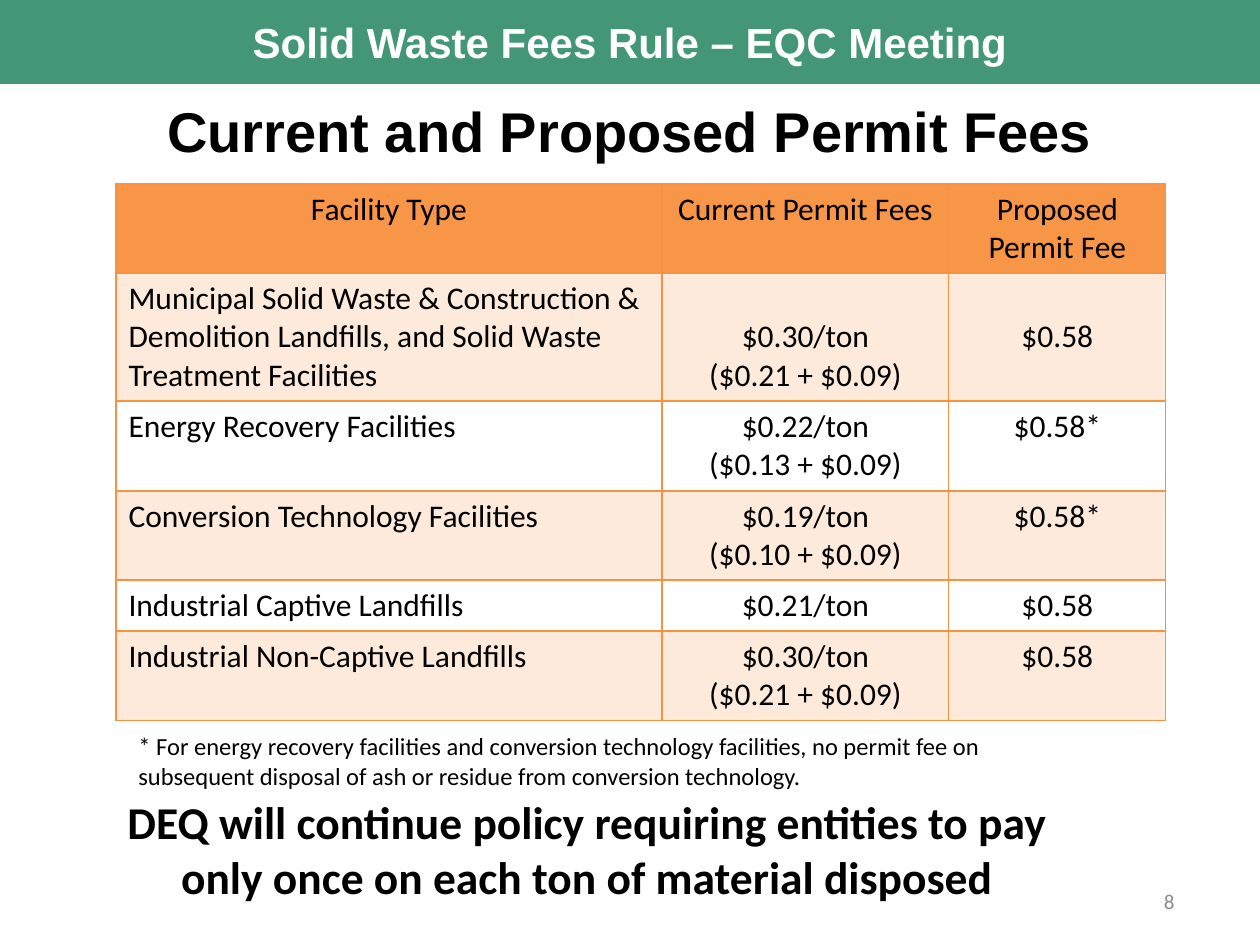
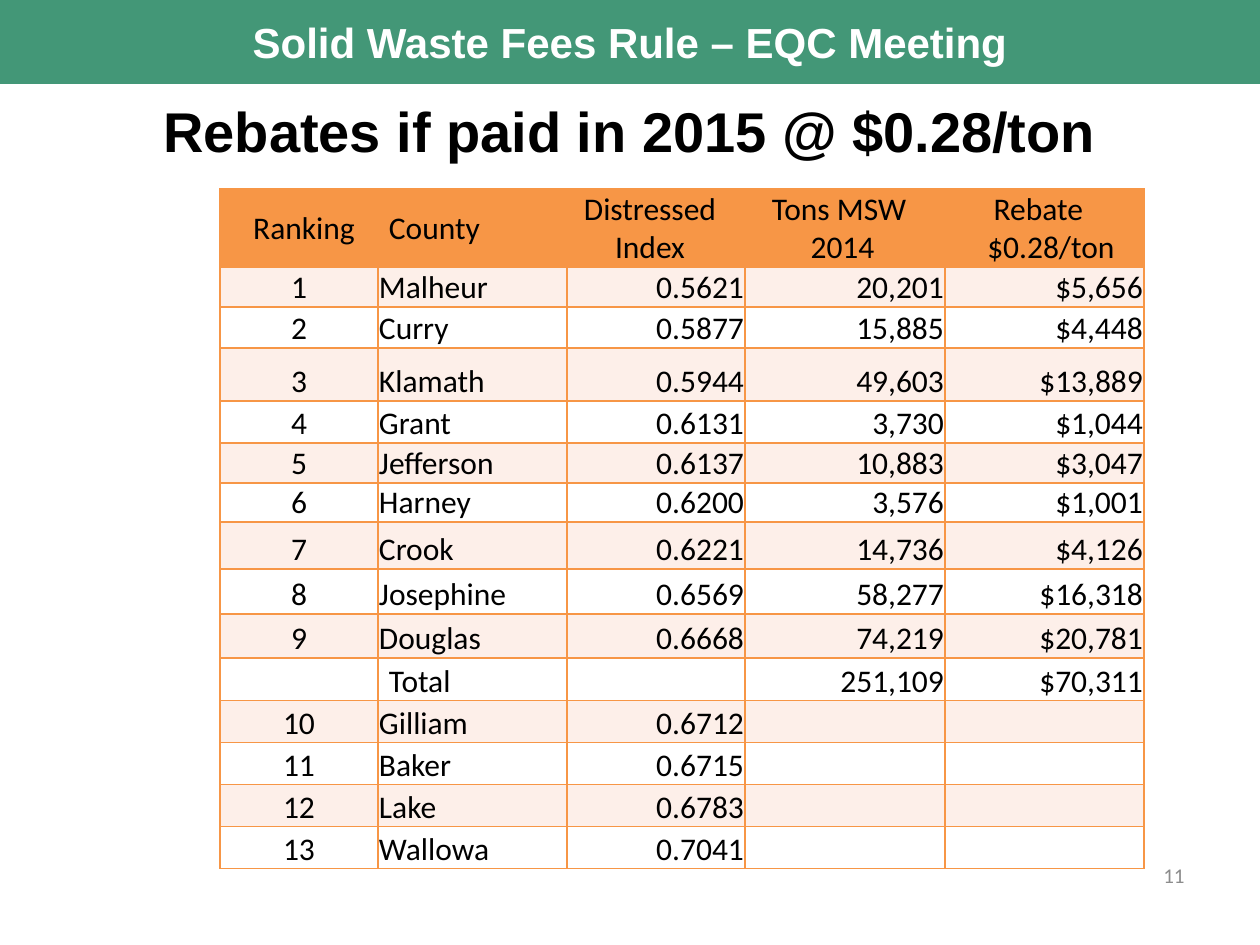
from lxml.etree import SubElement
from pptx import Presentation
from pptx.dml.color import RGBColor
from pptx.enum.shapes import MSO_SHAPE
from pptx.enum.text import MSO_ANCHOR, MSO_AUTO_SIZE, PP_ALIGN
from pptx.oxml.ns import qn
from pptx.util import Emu, Pt

COLORS = {
    "band": "439777", "white": "FFFFFF", "black": "000000", "number": "8C8C8C",
    "header": "F79646", "fee_stripe": "FDEADA", "rebate_stripe": "FDEFE9",
    "fee_border": "F69240", "rebate_border": "F79646",
}
LEFT, CENTER, RIGHT = PP_ALIGN.LEFT, PP_ALIGN.CENTER, PP_ALIGN.RIGHT
TOP, MIDDLE, BOTTOM = MSO_ANCHOR.TOP, MSO_ANCHOR.MIDDLE, MSO_ANCHOR.BOTTOM

FEE_ROWS = [
    ("Facility Type", "Current Permit Fees", "Proposed Permit Fee"),
    ("Municipal Solid Waste & Construction & Demolition Landfills, "
     "and Solid Waste Treatment Facilities", "$0.30/ton\n($0.21 + $0.09)", "$0.58"),
    ("Energy Recovery Facilities", "$0.22/ton\n($0.13 + $0.09)", "$0.58*"),
    ("Conversion Technology Facilities", "$0.19/ton\n($0.10 + $0.09)", "$0.58*"),
    ("Industrial Captive Landfills", "$0.21/ton", "$0.58"),
    ("Industrial Non-Captive Landfills", "$0.30/ton\n($0.21 + $0.09)", "$0.58"),
]
FEE_WIDTHS = [546, 287, 217]
FEE_HEIGHTS = [89, 128, 90, 89, 51, 90]

REBATE_ROWS = [
    ("Ranking", "County", "Distressed Index", "Tons MSW\n2014", "Rebate\n$0.28/ton"),
    ("1", "Malheur", "0.5621", "20,201", "$5,656"),
    ("2", "Curry", "0.5877", "15,885", "$4,448"),
    ("3", "Klamath", "0.5944", "49,603", "$13,889"),
    ("4", "Grant", "0.6131", "3,730", "$1,044"),
    ("5", "Jefferson", "0.6137", "10,883", "$3,047"),
    ("6", "Harney", "0.6200", "3,576", "$1,001"),
    ("7", "Crook", "0.6221", "14,736", "$4,126"),
    ("8", "Josephine", "0.6569", "58,277", "$16,318"),
    ("9", "Douglas", "0.6668", "74,219", "$20,781"),
    ("", "Total", "", "251,109", "$70,311"),
    ("10", "Gilliam", "0.6712", "", ""),
    ("11", "Baker", "0.6715", "", ""),
    ("12", "Lake", "0.6783", "", ""),
    ("13", "Wallowa", "0.7041", "", ""),
]
REBATE_WIDTHS = [158, 189, 178, 200, 199]
REBATE_HEIGHTS = [78, 40, 41, 53, 42, 40, 39, 47, 45, 44, 43, 42, 42, 42, 42]


def px(length):
    return Emu(round(length * 914400 / 126))


def rgb(name):
    return RGBColor.from_string(COLORS[name])


def write(frame, text, size, color="black", align=LEFT, font="Calibri", bold=False):
    """Fill a text frame, one paragraph for each line of text."""
    frame.text = text
    for para in frame.paragraphs:
        para.alignment = align
        para.font.name = font
        para.font.size = Pt(size)
        para.font.bold = bold
        para.font.color.rgb = rgb(color)


def add_text(page, box, text, size, anchor=TOP, **style):
    frame = page.shapes.add_textbox(*map(px, box)).text_frame
    frame.word_wrap = True
    frame.vertical_anchor = anchor
    write(frame, text, size, **style)


def add_band(page):
    band = page.shapes.add_shape(MSO_SHAPE.RECTANGLE, 0, 0, px(1260), px(84))
    band.shadow.inherit = False
    band.fill.solid()
    band.fill.fore_color.rgb = rgb("band")
    band.line.fill.background()
    band.text_frame.vertical_anchor = MIDDLE
    write(band.text_frame, "Solid Waste Fees Rule – EQC Meeting", 24,
          color="white", align=CENTER, font="Arial", bold=True)


def set_title(page, text, height):
    title = page.shapes.title
    title.left, title.top, title.width, title.height = map(px, (63, 84, 1134, height))
    frame = title.text_frame
    frame.auto_size = MSO_AUTO_SIZE.NONE
    frame.vertical_anchor = TOP
    frame.margin_top = px(13)
    write(frame, text, 32, align=CENTER, font="Arial", bold=True)


def add_page(deck, title, title_height, number, number_box):
    page = deck.slides.add_slide(deck.slide_layouts[5])
    add_band(page)
    set_title(page, title, title_height)
    add_text(page, number_box, number, 12, MIDDLE, color="number", align=RIGHT)
    return page


def set_margins(cell, left, top, right, bottom):
    cell.margin_left, cell.margin_top = px(left), px(top)
    cell.margin_right, cell.margin_bottom = px(right), px(bottom)


def set_borders(cell, color, points):
    properties = cell._tc.get_or_add_tcPr()
    for position, side in enumerate(("a:lnL", "a:lnR", "a:lnT", "a:lnB")):
        line = SubElement(properties, qn(side), w=str(Pt(points)))
        fill = SubElement(line, qn("a:solidFill"))
        SubElement(fill, qn("a:srgbClr"), val=COLORS[color])
        properties.insert(position, line)


def add_table(page, left, top, widths, heights, rows, aligns, stripe, border, points):
    """Add a striped table whose header row is centred, and return it."""
    table = page.shapes.add_table(len(rows), len(widths), px(left), px(top),
                                  px(sum(widths)), px(sum(heights))).table
    table.first_row = table.horz_banding = False
    for column, width in zip(table.columns, widths):
        column.width = px(width)
    for row, height in zip(table.rows, heights):
        row.height = px(height)
    for r, texts in enumerate(rows):
        fill = "header" if r == 0 else stripe if r % 2 else "white"
        for c, text in enumerate(texts):
            cell = table.cell(r, c)
            cell.fill.solid()
            cell.fill.fore_color.rgb = rgb(fill)
            write(cell.text_frame, text, 18, align=CENTER if r == 0 else aligns[c])
            set_borders(cell, border, points)
    return table


def add_fee_table(page):
    table = add_table(page, 116, 184, FEE_WIDTHS, FEE_HEIGHTS, FEE_ROWS,
                      (LEFT, CENTER, CENTER), "fee_stripe", "fee_border", 0.75)
    table.cell(1, 1).vertical_anchor = BOTTOM
    table.cell(1, 2).vertical_anchor = MIDDLE


def add_rebate_table(page):
    table = add_table(page, 220, 189, REBATE_WIDTHS, REBATE_HEIGHTS, REBATE_ROWS,
                      (CENTER, LEFT, RIGHT, RIGHT, RIGHT),
                      "rebate_stripe", "rebate_border", 1)
    for cell in table.iter_cells():
        cell.vertical_anchor = BOTTOM
        set_margins(cell, 1, 1, 1, 0)
    for c in range(len(REBATE_WIDTHS)):
        header = table.cell(0, c)
        if c < 2:
            header.vertical_anchor = MIDDLE
            set_margins(header, 11, 1, 1, 0)
        else:
            set_margins(header, 1, 1, 13, 0)
    table.cell(0, 1).text_frame.paragraphs[0].alignment = LEFT
    set_margins(table.cell(10, 1), 11, 1, 1, 0)
    for c, indent in ((3, 7), (4, 25)):
        second_line = table.cell(0, c).text_frame.paragraphs[1]
        second_line._p.get_or_add_pPr().set("marL", str(px(indent)))


def main():
    deck = Presentation()
    deck.slide_width, deck.slide_height = px(1260), px(945)

    fees = add_page(deck, "Current and Proposed Permit Fees", 116, "8",
                    (903, 876, 284, 50))
    add_fee_table(fees)
    add_text(fees, (126, 725, 987, 72),
             "* For energy recovery facilities and conversion technology facilities, "
             "no permit fee on subsequent disposal of ash or residue from "
             "conversion technology.", 14)
    add_text(fees, (73, 788, 1029, 123),
             "DEQ will continue policy requiring entities to pay only once "
             "on each ton of material disposed", 26, align=CENTER, bold=True)

    rebates = add_page(deck, "Rebates if paid in 2015 @ $0.28/ton", 84, "11",
                       (924, 850, 273, 50))
    add_rebate_table(rebates)
    deck.save("out.pptx")


if __name__ == "__main__":
    main()
